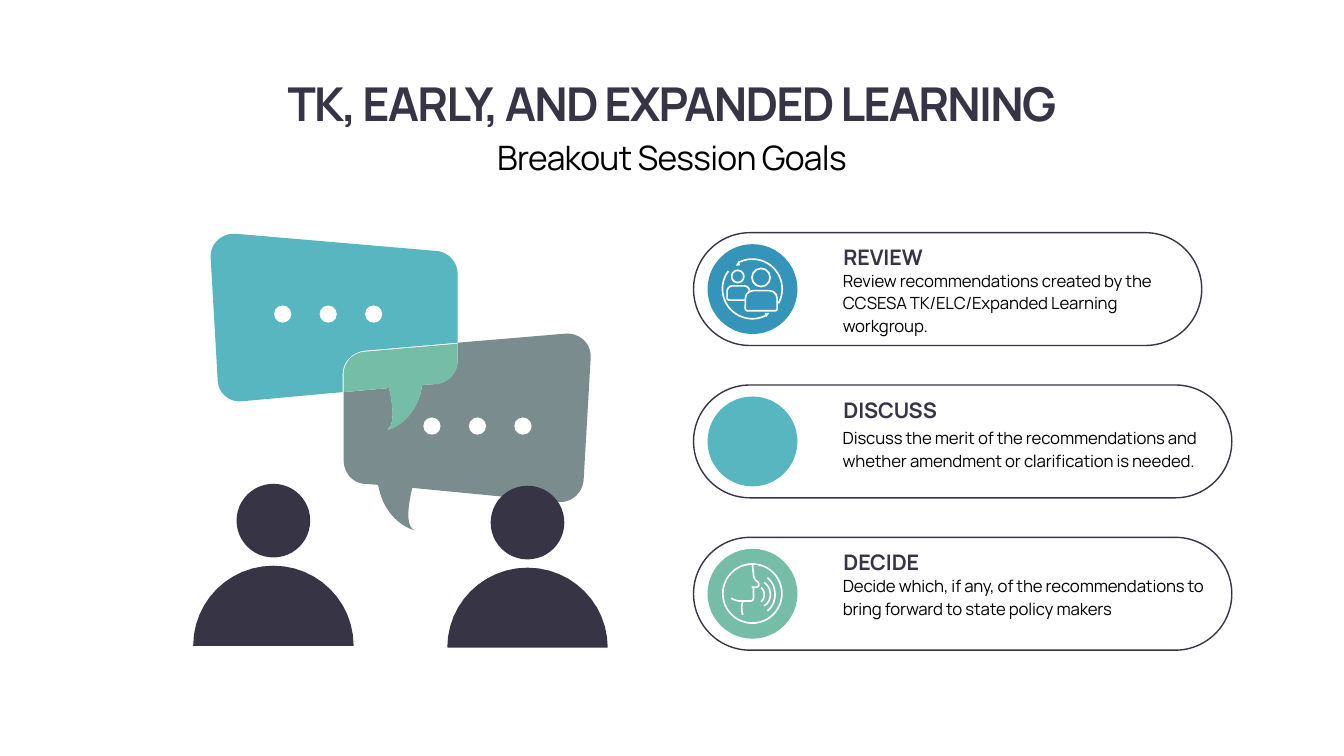
import math
from dataclasses import dataclass

from pptx import Presentation
from pptx.dml.color import RGBColor
from pptx.enum import shapes, text
from pptx.util import Pt


@dataclass(frozen=True)
class Theme:
    font: str = "Manrope"
    navy: str = "373545"
    blue: str = "3494BA"
    teal: str = "58B6C0"
    green: str = "75BDA7"
    grey: str = "7A8C8E"
    white: str = "FFFFFF"
    black: str = "000000"
    title: float = 33.3
    subtitle: float = 24
    heading: float = 15.3
    body: float = 12
    stroke: float = 1.2


THEME = Theme()
PRESET = shapes.MSO_SHAPE

TEAL_BUBBLE = [
    (121.9, 84.6), (188.9, 78.8), (188.9, 29.8),
    (188.9, 21.2, 182.4, 14, 173.8, 13.3), (30.5, 1),
    (20.4, 0.3, 11.8, 8.2, 12.5, 18.3), (17.5, 105.4),
    (17.5, 114.8, 26.2, 122, 35.5, 120.6), (106.8, 114.1), (106.8, 101.1),
    (106.8, 92.5, 113.3, 86, 121.9, 84.6)]
GREY_BUBBLE = [
    (265.9, 72.3), (188.9, 78.8), (188.9, 91.8),
    (188.9, 100.4, 182.4, 106.9, 173.8, 108.3), (163.7, 109),
    (159.4, 136.4, 138.5, 140.7, 138.5, 140.7),
    (144.2, 137.8, 142.8, 123.4, 139.9, 111.2), (107.5, 114.1), (107.5, 163),
    (107.5, 171.7, 114, 178.9, 121.9, 179.6), (132, 180.3),
    (137, 207.7, 157.9, 212.7, 157.9, 212.7),
    (151.4, 209.1, 153.6, 194.7, 156.5, 182.5), (260.9, 192.6),
    (270.2, 193.3, 278.2, 186.1, 278.9, 176.7), (283.9, 89.6),
    (284.6, 79.5, 276, 71.6, 265.9, 72.3)]
OVERLAP = [
    (138.5, 141.4), (138.5, 141.4, 159.4, 137.1, 163.7, 109), (174.5, 108.3),
    (182.4, 107.6, 188.9, 100.4, 188.9, 91.8), (188.9, 79.5), (121.9, 85.3),
    (114, 86, 107.5, 93.2, 107.5, 101.1), (107.5, 114.1), (139.9, 111.2),
    (142.8, 123.4, 144.2, 137.8, 138.5, 141.4)]
SHOULDERS = [
    (0, 115.7), (0, 84, 25.7, 58.5, 57.3, 58.5),
    (88.9, 58.5, 114.6, 84, 114.6, 115.7)]
BACK_PERSON = [
    (27, 40), (16.2, 40), (14.8, 40, 14, 39.6, 14, 38.6), (14, 34),
    (14, 31.5, 15.8, 29.8, 18, 29.8), (26, 29.8),
    (28.2, 29.8, 29.7, 31.4, 30, 33.2)]
ARROWHEADS = [[(40.8, 49.2), (44.2, 49), (42, 52.2)],
              [(22.3, 12), (20.2, 15.4), (23.3, 15.2)]]
SPEAKER_LINES = [
    [(32.1, 11.5), (32.8, 18), (32.8, 20.4, 33.8, 22.3, 35.6, 23.4),
     (37.2, 24.6, 37, 27.4, 34.9, 27.4), (31.4, 27.4)],
    [(32.8, 27.4), (32.8, 35.5), (32.8, 36.7, 31.7, 37.3, 30.6, 37.3),
     (23.1, 37.3), (20.8, 37.3, 18.8, 36.4, 17, 35.3)],
    [(25.2, 37.6), (24, 41, 24.2, 44, 25.2, 47.2)],
    [(38.2, 27.7), (41.3, 30.3, 41.3, 35.6, 38.2, 37.8)],
    [(40.4, 24), (46.4, 28.2, 46.4, 37.2, 40.4, 40.7)],
    [(42.8, 20.7), (50, 26.4, 50, 38.8, 42.8, 44.3)]]


def paint(shape, fill=None, line=None, weight=THEME.stroke):
    shape.shadow.inherit = False
    if fill:
        shape.fill.solid()
        shape.fill.fore_color.rgb = RGBColor.from_string(fill)
    else:
        shape.fill.background()
    if line:
        shape.line.color.rgb = RGBColor.from_string(line)
        shape.line.width = Pt(weight)
    else:
        shape.line.fill.background()


def add_preset(parent, preset, left, top, width, height, **style):
    shape = parent.add_shape(preset, Pt(left), Pt(top), Pt(width), Pt(height))
    paint(shape, **style)
    return shape


def flatten(path, steps=12):
    points = [path[0]]
    for segment in path[1:]:
        if len(segment) == 2:
            points.append(segment)
            continue
        controls = [points[-1], segment[:2], segment[2:4], segment[4:]]
        for step in range(1, steps + 1):
            t = step / steps
            weights = [math.comb(3, k) * t**k * (1 - t)**(3 - k) for k in range(4)]
            points.append(tuple(sum(w * point[axis] for w, point in zip(weights, controls))
                                for axis in (0, 1)))
    return points


def arc(center, radius, start, end, steps=40):
    angles = [math.radians(start + (end - start) * i / steps) for i in range(steps + 1)]
    return [(center + radius * math.cos(a), center + radius * math.sin(a)) for a in angles]


def add_outline(parent, left, top, path, closed=True, **style):
    points = [(Pt(left + x), Pt(top + y)) for x, y in flatten(path)]
    builder = parent.build_freeform(*points[0])
    builder.add_line_segments(points[1:], close=closed)
    paint(builder.convert_to_shape(), **style)


def write(shape, content, size, color, spacing, bold=False, align=None,
          anchor=text.MSO_ANCHOR.TOP, line_spacing=None):
    frame = shape.text_frame
    frame.word_wrap = True
    frame.auto_size = text.MSO_AUTO_SIZE.NONE
    frame.vertical_anchor = anchor
    frame.text = content
    paragraph = frame.paragraphs[0]
    paragraph.alignment = align
    if line_spacing:
        paragraph.line_spacing = Pt(line_spacing)
    font = paragraph.font
    font.name, font.size, font.bold = THEME.font, Pt(size), bold
    font.color.rgb = RGBColor.from_string(color)
    font._rPr.set("spc", str(round(spacing * 100)))


def add_text(slide, left, top, width, height, *content, **style):
    shape = slide.shapes.add_textbox(Pt(left), Pt(top), Pt(width), Pt(height))
    write(shape, *content, **style)


def add_header(slide, left, top, width):
    title = slide.shapes.title
    title.left, title.top, title.width, title.height = Pt(left), Pt(top), Pt(width), Pt(47.5)
    center = text.PP_ALIGN.CENTER
    write(title, "TK, EARLY, AND EXPANDED LEARNING", THEME.title, THEME.navy, -1.3,
          bold=True, align=center, anchor=text.MSO_ANCHOR.BOTTOM)
    add_text(slide, left, top + 44.6, width, 36, "Breakout Session Goals",
             THEME.subtitle, THEME.black, -0.5, align=center)


def add_person(parent, left, top):
    add_outline(parent, left, top, SHOULDERS, fill=THEME.navy)
    add_preset(parent, PRESET.OVAL, left + 31, top, 52.6, 52.6, fill=THEME.navy)


def add_conversation(slide, left, top):
    group = slide.shapes.add_group_shape().shapes
    for path, color in ((GREY_BUBBLE, THEME.grey), (TEAL_BUBBLE, THEME.teal),
                        (OVERLAP, THEME.green)):
        add_outline(group, left, top, path, fill=color)
    for x, y in ((0, 179.6), (181.5, 181)):
        add_person(group, left + x, top + y)
    for x, y in ((57.8, 52.2), (164.4, 132.2)):
        for dot in range(3):
            add_preset(group, PRESET.OVAL, left + x + dot * 32.5, top + y, 12.3, 12.3,
                       fill=THEME.white)


def add_review_icon(parent, left, top):
    for x, y, size in ((17.2, 18.7, 8.8), (31.7, 17.3, 13)):
        add_preset(parent, PRESET.OVAL, left + x, top + y, size, size, line=THEME.white)
    front = add_preset(parent, PRESET.ROUND_2_SAME_RECTANGLE, left + 27, top + 33.2,
                       22.7, 14.4, line=THEME.white)
    front.adjustments[0], front.adjustments[1] = 0.38, 0.1
    for path in (BACK_PERSON, arc(32, 21.3, 217, 63), arc(32, 21.3, 29, -117)):
        add_outline(parent, left, top, path, closed=False, line=THEME.white)
    for path in ARROWHEADS:
        add_outline(parent, left, top, path, fill=THEME.white)


def add_decide_icon(parent, left, top):
    add_preset(parent, PRESET.OVAL, left + 10.9, top + 10.9, 42.2, 42.2, line=THEME.white)
    for path in SPEAKER_LINES:
        add_outline(parent, left, top, path, closed=False, line=THEME.white)


def add_goal(slide, left, top, width, color, icon, heading, body, body_top, body_width):
    pill = add_preset(slide.shapes, PRESET.ROUNDED_RECTANGLE, left, top, width, 80.6,
                      line=THEME.navy, weight=1)
    pill.adjustments[0] = 0.5
    add_preset(slide.shapes, PRESET.OVAL, left + 10, top + 8.2, 64.2, 64.2, fill=color)
    if icon:
        icon(slide.shapes.add_group_shape().shapes, left + 10, top + 8.2)
    add_text(slide, left + 100, top + 4.3, 204.5, 26, heading, THEME.heading, THEME.navy,
             -0.1, bold=True, anchor=text.MSO_ANCHOR.BOTTOM)
    add_text(slide, left + 99.5, top + body_top, body_width, 55.4, body, THEME.body,
             THEME.black, -0.1, line_spacing=16.2)


def main():
    presentation = Presentation()
    presentation.slide_width, presentation.slide_height = Pt(960), Pt(540)
    slide = presentation.slides.add_slide(presentation.slide_layouts[5])
    add_header(slide, 102, 49.7, 756)
    add_conversation(slide, 138, 166)
    goals = [
        (363, THEME.blue, add_review_icon, "REVIEW",
         "Review recommendations created by the CCSESA TK/ELC/Expanded Learning workgroup.",
         21.6, 262),
        (384.5, THEME.teal, None, "DISCUSS",
         "Discuss the merit of the recommendations and whether amendment or "
         "clarification is needed.", 25.2, 285),
        (384.5, THEME.green, add_decide_icon, "DECIDE",
         "Decide which, if any, of the recommendations to bring forward to state "
         "policy makers", 22.3, 273)]
    for index, goal in enumerate(goals):
        add_goal(slide, 495.4, 166.2 + index * 108.8, *goal)
    presentation.save("out.pptx")


if __name__ == "__main__":
    main()
